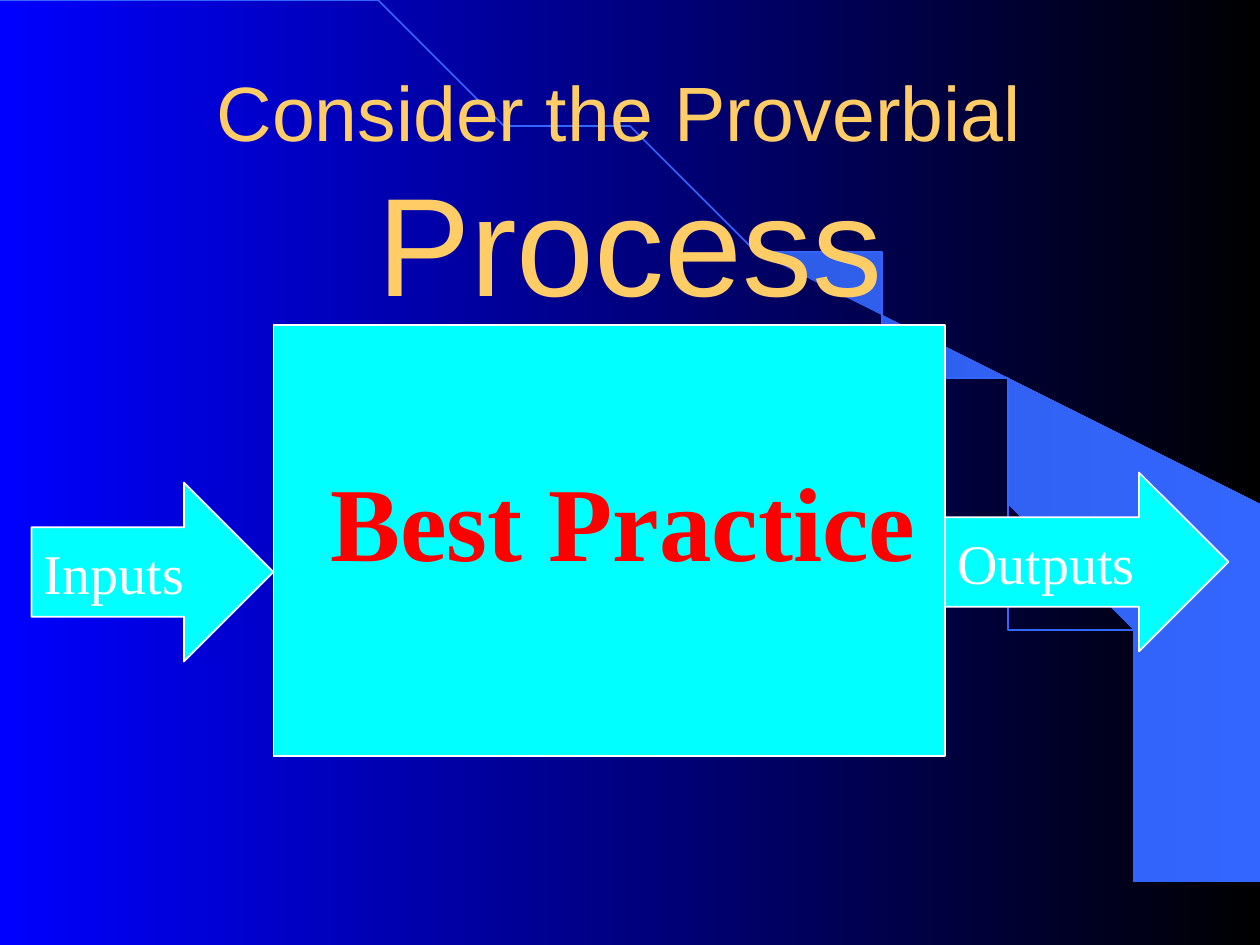
from math import cos, pi, sin

from pptx import Presentation
from pptx.dml.color import RGBColor
from pptx.enum.shapes import MSO_SHAPE
from pptx.enum.text import MSO_ANCHOR, PP_ALIGN
from pptx.util import Inches, Pt

RECT, ARROW = MSO_SHAPE.RECTANGLE, MSO_SHAPE.RIGHT_ARROW
TOP, MIDDLE = MSO_ANCHOR.TOP, MSO_ANCHOR.MIDDLE
LEFT, CENTER = PP_ALIGN.LEFT, PP_ALIGN.CENTER

WIDE, HIGH = 10, 7.5
COLORS = {"blue": "0000FF", "black": "000000", "dusk": "2E5DE7", "sky": "3366FF",
          "gold": "FFCC66", "cyan": "00FFFF", "white": "FFFFFF", "red": "FF0000"}

TITLE = [("Consider the Proverbial", 44), (" ", 44), ("Process", 80)]
TITLE_BOX = (0.25, 0.92, 9.33, 1.25)

BOX_X, BOX_W = 2.17, 5.33
END_X = BOX_X + BOX_W
# kind, text, box, size, colour, bold, anchor, left and top inset
STEPS = [
    (RECT, "Best Practice", (BOX_X, 2.58, BOX_W, 3.42), 60, "red", True, TOP, (0.45, 1.04)),
    (ARROW, "Inputs", (0.25, 3.83, BOX_X - 0.25, 1.42), 32, "white", False, MIDDLE, (0.1, 0.05)),
    (ARROW, "Outputs", (END_X, 3.75, 2.25, 1.42), 32, "white", False, MIDDLE, (0.1, 0.05)),
]

ARC_W, ARC_H, ARC_N = 9.2, 7.49, 60
BEAM = [(9.2, 7.48), (9.99, 7.49), (9.99, 4.23), (5.89, 1.73), (6.24, 1.99),
        (6.53, 2.22), (6.85, 2.5), (7.16, 2.8), (7.62, 3.3), (8.03, 3.84),
        (8.32, 4.31), (8.58, 4.79), (8.78, 5.28), (8.93, 5.72), (9.03, 6.09),
        (9.13, 6.56), (9.17, 6.96)]


def rgb(name):
    return RGBColor.from_string(COLORS[name])


def blend(fill, *names):
    """Fill from left to right between two colours."""
    fill.gradient()
    fill.gradient_angle = 0
    for stop, name in zip(fill.gradient_stops, names):
        stop.color.rgb = rgb(name)


def outline(shapes, points, close):
    pen = shapes.build_freeform(*points[0], scale=Inches(1))
    pen.add_line_segments(points[1:], close=close)
    shape = pen.convert_to_shape()
    shape.shadow.inherit = False
    return shape


def add_decor(slide):
    blend(slide.background.fill, "blue", "black")
    beam = outline(slide.shapes, BEAM, True)
    blend(beam.fill, "dusk", "sky")
    beam.line.fill.background()

    turns = [pi / 2 * i / ARC_N for i in range(ARC_N + 1)]
    curve = [(ARC_W * sin(t), ARC_H * (1 - cos(t))) for t in turns]
    arc = outline(slide.shapes, curve, False)
    arc.fill.background()
    arc.line.color.rgb = rgb("sky")
    arc.line.width = Pt(1)


def add_title(slide):
    title = slide.shapes.title
    title.left, title.top, title.width, title.height = map(Inches, TITLE_BOX)
    slide.shapes._spTree.append(title._element)  # in front of the decor
    frame = title.text_frame
    frame.vertical_anchor = MIDDLE
    para = frame.paragraphs[0]
    para.alignment = CENTER
    para.line_spacing = 1.0
    para.space_before = Pt(0)
    for i, (text, size) in enumerate(TITLE):
        if i == 1:
            para.add_line_break()
        run = para.add_run()
        run.text = text
        run.font.size = Pt(size)
        run.font.name = "Arial"
        run.font.color.rgb = rgb("gold")


def add_step(slide, kind, text, box, size, color, bold, anchor, inset):
    shape = slide.shapes.add_shape(kind, *map(Inches, box))
    shape.shadow.inherit = False
    shape.fill.solid()
    shape.fill.fore_color.rgb = rgb("cyan")
    shape.line.color.rgb = rgb("white")
    shape.line.width = Pt(1)
    frame = shape.text_frame
    frame.word_wrap = True
    frame.vertical_anchor = anchor
    frame.margin_left, frame.margin_top = map(Inches, inset)
    para = frame.paragraphs[0]
    para.text = text
    para.alignment = LEFT
    font = para.font
    font.name, font.size, font.bold = "Times New Roman", Pt(size), bold
    font.color.rgb = rgb(color)


def main():
    deck = Presentation()
    deck.slide_width, deck.slide_height = Inches(WIDE), Inches(HIGH)
    slide = deck.slides.add_slide(deck.slide_layouts[5])
    add_decor(slide)
    add_title(slide)
    for step in STEPS:
        add_step(slide, *step)
    deck.save("out.pptx")


if __name__ == "__main__":
    main()
